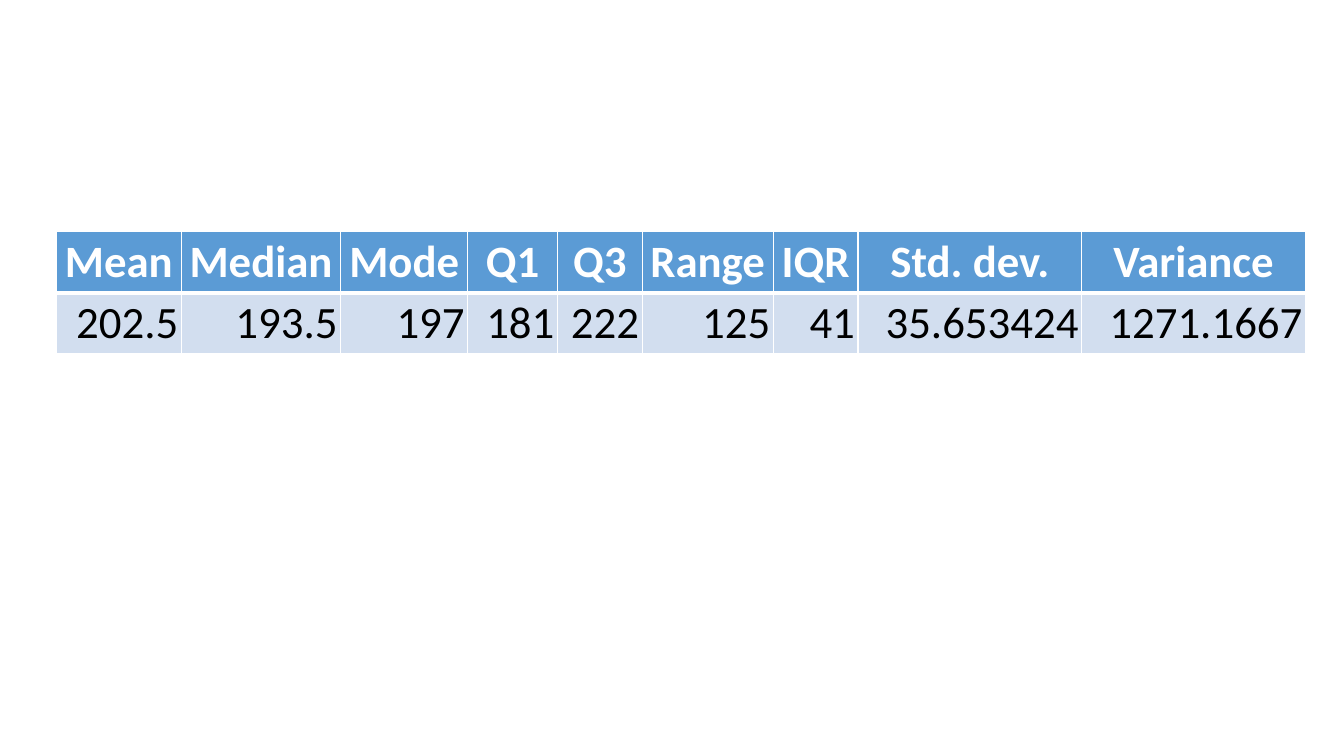
from lxml import etree
from pptx import Presentation
from pptx.dml.color import RGBColor
from pptx.enum.text import MSO_ANCHOR, PP_ALIGN
from pptx.oxml.ns import qn
from pptx.util import Inches, Pt

CENTER = PP_ALIGN.CENTER
RIGHT = PP_ALIGN.RIGHT
MIDDLE = MSO_ANCHOR.MIDDLE

FONT = "Calibri"
WHITE = "FFFFFF"
BLACK = "000000"
HEADER_BLUE = "5B9BD5"
VALUE_BLUE = "D2DEEF"
TABLE_LEFT = 0.56
TABLE_TOP = 2.3
ROW_HEIGHT = 0.6
CELL_MARGIN = 0.03

LOCATION_STATISTICS = [
    ("Mean", "202.5", 1.24),
    ("Median", "193.5", 1.58),
    ("Mode", "197", 1.26),
    ("Q1", "181", 0.89),
    ("Q3", "222", 0.84),
]
SPREAD_STATISTICS = [
    ("Range", "125", 1.3),
    ("IQR", "41", 0.84),
    ("Std. dev.", "35.653424", 2.22),
    ("Variance", "1271.1667", 2.22),
]


def color(value):
    return RGBColor.from_string(value)


def write_text(frame, text, size=32, ink=BLACK, bold=False, align=RIGHT):
    para = frame.paragraphs[0]
    para.alignment = align
    span = para.add_run()
    span.text = text
    span.font.name = FONT
    span.font.size = Pt(size)
    span.font.bold = bold
    span.font.color.rgb = color(ink)


def set_borders(cell, top=1, bottom=1):
    properties = cell._tc.get_or_add_tcPr()
    widths = {"a:lnL": 1, "a:lnR": 1, "a:lnT": top, "a:lnB": bottom}
    for position, (tag, width) in enumerate(widths.items()):
        line = etree.Element(qn(tag), w=str(Pt(width)))
        fill = etree.SubElement(line, qn("a:solidFill"))
        etree.SubElement(fill, qn("a:srgbClr"), val=WHITE)
        properties.insert(position, line)


def fill_cell(cell, text, background, top=1, bottom=1, **text_format):
    cell.margin_left = cell.margin_right = Inches(CELL_MARGIN)
    cell.margin_top = cell.margin_bottom = Inches(CELL_MARGIN)
    cell.vertical_anchor = MIDDLE
    cell.fill.solid()
    cell.fill.fore_color.rgb = color(background)
    set_borders(cell, top, bottom)
    write_text(cell.text_frame, text, **text_format)


def add_statistics_table(page, statistics, left):
    total_width = sum(width for _, _, width in statistics)
    table = page.shapes.add_table(
        2, len(statistics), Inches(left), Inches(TABLE_TOP),
        Inches(total_width), Inches(2 * ROW_HEIGHT),
    ).table
    for row in table.rows:
        row.height = Inches(ROW_HEIGHT)
    for index, (name, value, width) in enumerate(statistics):
        table.columns[index].width = Inches(width)
        fill_cell(table.cell(0, index), name, HEADER_BLUE, bottom=3,
                  ink=WHITE, bold=True, align=CENTER)
        fill_cell(table.cell(1, index), value, VALUE_BLUE, top=3)
    return left + total_width


def main():
    deck = Presentation()
    deck.slide_width = Inches(13.33)
    deck.slide_height = Inches(7.5)
    page = deck.slides.add_slide(deck.slide_layouts[6])
    left = TABLE_LEFT
    for statistics in (LOCATION_STATISTICS, SPREAD_STATISTICS):
        left = add_statistics_table(page, statistics, left)
    deck.save("out.pptx")


if __name__ == "__main__":
    main()
